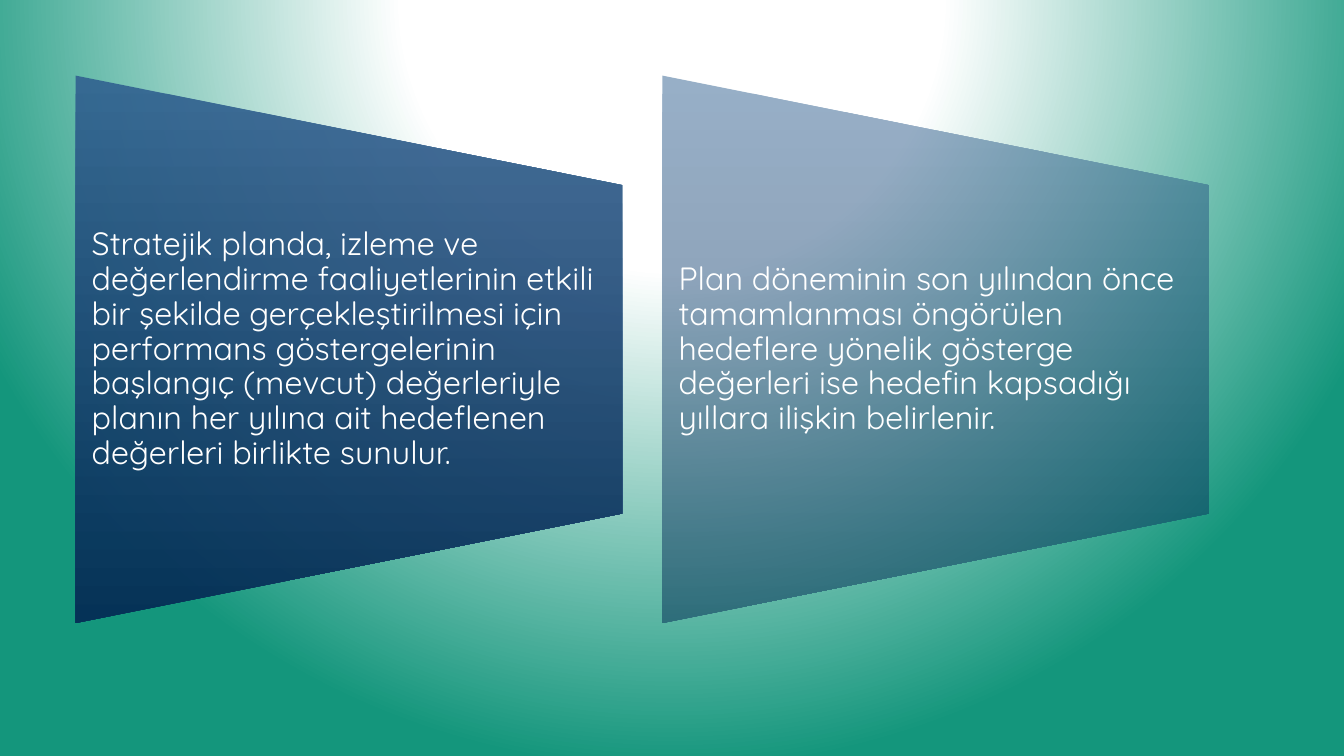
from lxml import etree
from pptx import Presentation
from pptx.dml.color import RGBColor
from pptx.enum import shapes, text
from pptx.oxml import ns
from pptx.util import Inches, Pt

PANEL_WIDTH, PANEL_HEIGHT = 5.42, 5.43
PANEL_LEFT, PANEL_TOP, PANEL_STEP = 0.75, 0.75, 5.82
TEXT_TOP, TEXT_HEIGHT = 1.84, 3.26
PANELS = [
    ("Stratejik planda, izleme ve değerlendirme faaliyetlerinin etkili bir "
     "şekilde gerçekleştirilmesi için performans göstergelerinin başlangıç "
     "(mevcut) değerleriyle planın her yılına ait hedeflenen değerleri "
     "birlikte sunulur.", 90),
    ("Plan döneminin son yılından önce tamamlanması öngörülen hedeflere "
     "yönelik gösterge değerleri ise hedefin kapsadığı yıllara ilişkin "
     "belirlenir.", 50),
]


def color(value):
    return RGBColor.from_string(value)


def set_gradient(fill, owner, stops, direction, **attributes):
    """Give owner a gradient; stops are (percent, colour, opacity percent)."""
    fill.solid()
    solid = owner.find(ns.qn("a:solidFill"))
    gradient = etree.Element(ns.qn("a:gradFill"), rotWithShape="0")
    stop_list = etree.SubElement(gradient, ns.qn("a:gsLst"))
    for position, value, opacity in stops:
        stop = etree.SubElement(stop_list, ns.qn("a:gs"), pos=str(position * 1000))
        shade = etree.SubElement(stop, ns.qn("a:srgbClr"), val=value)
        if opacity < 100:
            etree.SubElement(shade, ns.qn("a:alpha"), val=str(opacity * 1000))
    course = etree.SubElement(gradient, ns.qn(direction), **attributes)
    owner.replace(solid, gradient)
    return course


def add_background(slide):
    fill = slide.background.fill
    fill.solid()
    owner = slide.element.find(".//" + ns.qn("p:bgPr"))
    stops = [(0, "FFFFFF", 100), (35, "FFFFFF", 100), (100, "14967C", 100)]
    course = set_gradient(fill, owner, stops, "a:path", path="circle")
    etree.SubElement(course, ns.qn("a:fillToRect"),
                     l="50000", t="-80000", r="50000", b="180000")


def add_text(slide, words, left, top, width, height, *, size=23,
             font="Quicksand", fill="FFFFFF", inset=0.16, spacing=0.9):
    frame = slide.shapes.add_textbox(
        Inches(left), Inches(top), Inches(width), Inches(height)).text_frame
    frame.word_wrap = True
    frame.vertical_anchor = text.MSO_ANCHOR.MIDDLE
    frame.margin_left = frame.margin_right = Inches(inset)
    frame.margin_top = frame.margin_bottom = 0
    paragraph = frame.paragraphs[0]
    paragraph.line_spacing = spacing
    run = paragraph.add_run()
    run.text = words
    run.font.size, run.font.name = Pt(size), font
    run.font.color.rgb = color(fill)


def add_panel(slide, words, opacity, left, top, width, height):
    """Place a trapezoid, turned on its side, with its text in the box."""
    # The unrotated frame shares its centre with the box, with sides swapped.
    shift = (width - height) / 2
    trapezoid = slide.shapes.add_shape(
        shapes.MSO_SHAPE.FLOWCHART_MANUAL_OPERATION,
        Inches(left + shift), Inches(top - shift), Inches(height), Inches(width))
    trapezoid.rotation = 270
    trapezoid.shadow.inherit = False
    trapezoid.line.fill.background()
    set_gradient(trapezoid.fill, trapezoid.element.spPr,
                 [(0, "316190", opacity), (100, "042853", opacity)],
                 "a:lin", ang="5400000", scaled="0")
    add_text(slide, words, left, TEXT_TOP, width, TEXT_HEIGHT)


def main():
    presentation = Presentation()
    presentation.slide_width, presentation.slide_height = Inches(13.33), Inches(7.5)
    slide = presentation.slides.add_slide(presentation.slide_layouts[6])
    add_background(slide)
    for index, (words, opacity) in enumerate(PANELS):
        add_panel(slide, words, opacity, PANEL_LEFT + index * PANEL_STEP,
                  PANEL_TOP, PANEL_WIDTH, PANEL_HEIGHT)
    presentation.save("out.pptx")


if __name__ == "__main__":
    main()
